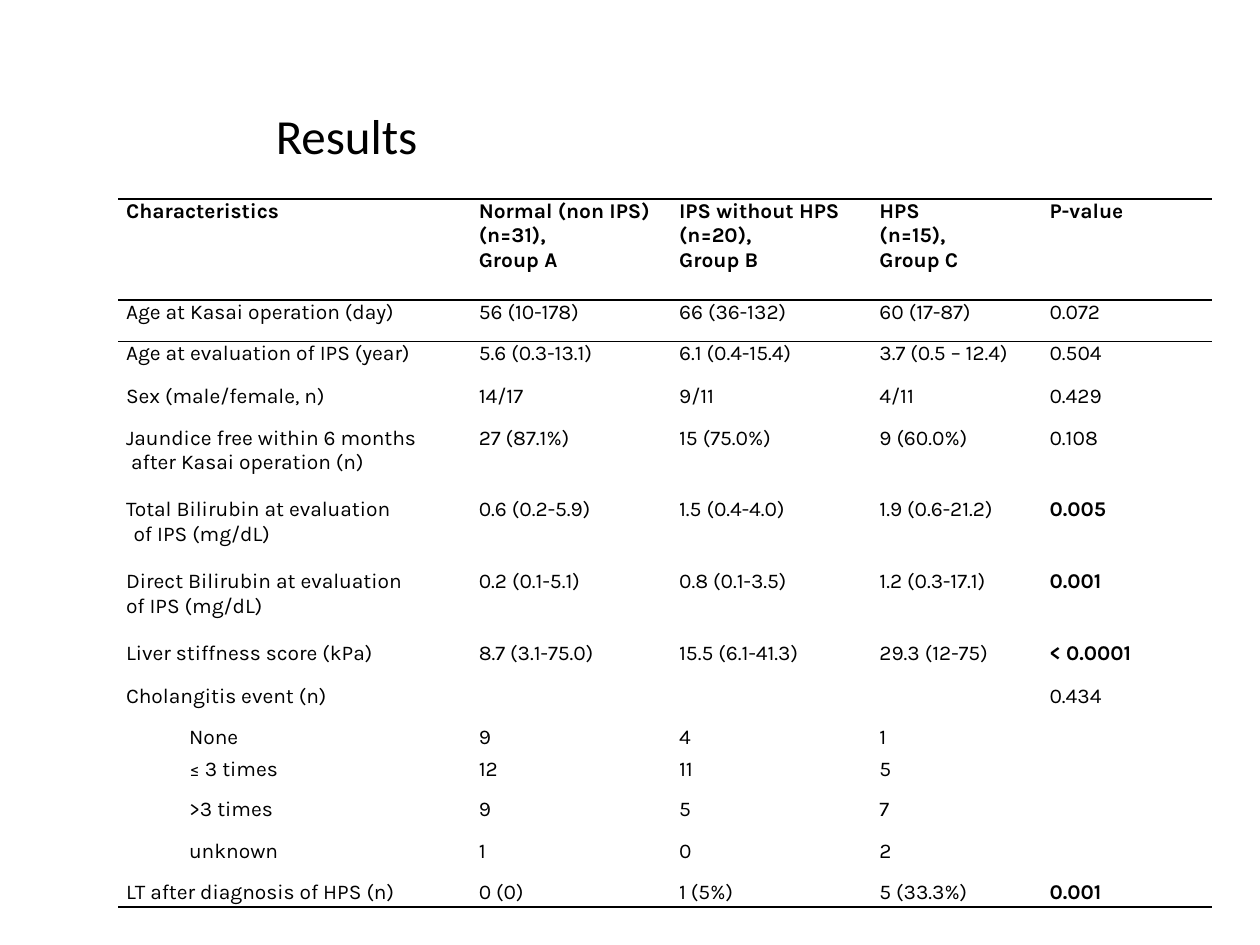
import pptx
import pptx.dml.color
import pptx.enum.text
import pptx.oxml
import pptx.oxml.ns
import pptx.util

BLACK = pptx.dml.color.RGBColor(0x00, 0x00, 0x00)
NO_STYLE = "{2D5ABB26-0587-4C30-8999-92F81FD0307C}"

# The slide is a grid of 100 columns by 75 rows, each 0.1 inch
GRID_COLUMNS, GRID_ROWS = 100, 75
COLUMN_SPANS = [5, 23, 15.9, 15.9, 13.5, 13.5]
SINGLE, DOUBLE = 3.3, 5.7
ROW_SPANS = [8, SINGLE, 3.4, SINGLE, DOUBLE, DOUBLE, DOUBLE, 3.4, SINGLE,
             2.5, 3.2, SINGLE, SINGLE, 2.1]

HEADER = ["Characteristics", "Normal (non IPS)\n(n=31),\nGroup A",
          "IPS without HPS\n(n=20),\nGroup B", "HPS\n(n=15),\nGroup C", "P-value"]
RESULTS = [
    ["Age at Kasai operation (day)", "56 (10-178)", "66 (36-132)", "60 (17-87)", "0.072"],
    ["Age at evaluation of IPS (year)", "5.6 (0.3-13.1)", "6.1 (0.4-15.4)",
     "3.7 (0.5 – 12.4)", "0.504"],
    ["Sex (male/female, n)", "14/17", "9/11", "4/11", "0.429"],
    ["Jaundice free within 6 months\nafter Kasai operation (n)",
     "27 (87.1%)", "15 (75.0%)", "9 (60.0%)", "0.108"],
    ["Total Bilirubin at evaluation\nof IPS (mg/dL)",
     "0.6 (0.2-5.9)", "1.5 (0.4-4.0)", "1.9 (0.6-21.2)", "0.005"],
    ["Direct Bilirubin at evaluation\nof IPS (mg/dL)",
     "0.2 (0.1-5.1)", "0.8 (0.1-3.5)", "1.2 (0.3-17.1)", "0.001"],
    ["Liver stiffness score (kPa)", "8.7 (3.1-75.0)", "15.5 (6.1-41.3)",
     "29.3 (12-75)", "< 0.0001"],
    ["Cholangitis event (n)", "", "", "", "0.434"],
    ["None", "9", "4", "1", ""],
    ["≤ 3 times", "12", "11", "5", ""],
    [">3 times", "9", "5", "7", ""],
    ["unknown", "1", "0", "2", ""],
    ["LT after diagnosis of HPS (n)", "0 (0)", "1 (5%)", "5 (33.3%)", "0.001"],
]
SUBROWS = {"None", "≤ 3 times", ">3 times", "unknown"}
SIGNIFICANT = {"0.005", "0.001", "< 0.0001"}
# Indent of the second line, in grid columns, by row number
SECOND_LINE_INDENT = {4: 0.4, 5: 0.6}


class ResultsSlide:
    title_format = {"name": "Calibri", "size": pptx.util.Pt(28)}
    cell_format = {"name": "Karla", "size": pptx.util.Pt(12)}
    cell_margins = {"margin_left": 0.6, "margin_right": 0.6,
                    "margin_top": 0, "margin_bottom": 0}

    def __init__(self, deck):
        self.slide = deck.slides.add_slide(deck.slide_layouts[6])
        self.column = deck.slide_width / GRID_COLUMNS
        self.row = deck.slide_height / GRID_ROWS

    def across(self, columns):
        return pptx.util.Emu(round(columns * self.column))

    def down(self, rows):
        return pptx.util.Emu(round(rows * self.row))

    def place(self, left, top, width, height):
        return self.across(left), self.down(top), self.across(width), self.down(height)

    def add_span(self, para, text, style, bold=False):
        span = para.add_run()
        span.text = text
        for name, value in {**style, "bold": bold}.items():
            setattr(span.font, name, value)
        span.font.color.rgb = BLACK

    def title(self, text, *area):
        frame = self.slide.shapes.add_textbox(*self.place(*area)).text_frame
        frame.word_wrap = True
        frame.vertical_anchor = pptx.enum.text.MSO_ANCHOR.BOTTOM
        self.add_span(frame.paragraphs[0], text, self.title_format)

    def rule(self, cell, edge):
        cell._tc.get_or_add_tcPr().append(pptx.oxml.parse_xml(
            f'<a:{edge} {pptx.oxml.ns.nsdecls("a")} w="12700"><a:solidFill>'
            f'<a:srgbClr val="{BLACK}"/></a:solidFill></a:{edge}>'))

    def fill_cell(self, cell, text, bold, second_indent):
        frame = cell.text_frame
        for index, line in enumerate(text.split("\n")):
            para = frame.add_paragraph() if index else frame.paragraphs[0]
            para.alignment = pptx.enum.text.PP_ALIGN.JUSTIFY
            if index and second_indent:
                para._p.get_or_add_pPr().set("marL", str(self.across(second_indent)))
            if line:
                self.add_span(para, line, self.cell_format, bold)

    def table(self, left, top, records):
        frame = self.slide.shapes.add_table(
            len(ROW_SPANS), len(COLUMN_SPANS),
            *self.place(left, top, sum(COLUMN_SPANS), sum(ROW_SPANS)))
        grid = frame.table
        grid.first_row = grid.horz_banding = False
        grid._tbl.tblPr.find(pptx.oxml.ns.qn("a:tableStyleId")).text = NO_STYLE
        for column, columns in zip(grid.columns, COLUMN_SPANS):
            column.width = self.across(columns)
        for row, rows in zip(grid.rows, ROW_SPANS):
            row.height = self.down(rows)

        # Rules above and below the header, and under the last row
        edges = {0: ["lnT", "lnB"], 1: ["lnT"], len(records) - 1: ["lnB"]}
        for number, (label, *values) in enumerate(records):
            # Main labels cover both left columns; sub-rows start in the second
            texts = ["", label, *values] if label in SUBROWS else [label, "", *values]
            if label not in SUBROWS:
                grid.cell(number, 0).merge(grid.cell(number, 1))
            for cell, text in zip(grid.rows[number].cells, texts):
                for name, columns in self.cell_margins.items():
                    setattr(cell, name, self.across(columns))
                for edge in edges.get(number, []):
                    self.rule(cell, edge)
                cell.fill.background()
                self.fill_cell(cell, text, number == 0 or text in SIGNIFICANT,
                               SECOND_LINE_INDENT.get(number))
                if not text:
                    # Empty cells keep the small text size so rows stay low
                    cell.text_frame.paragraphs[0]._p.append(pptx.oxml.parse_xml(
                        f'<a:endParaRPr {pptx.oxml.ns.nsdecls("a")} sz="1200"/>'))


def main():
    deck = pptx.Presentation()
    deck.slide_width = pptx.util.Inches(10)
    deck.slide_height = pptx.util.Inches(7.5)
    page = ResultsSlide(deck)
    page.title("Results", 20.9, 2.5, 74.8, 11)
    page.table(9.4, 15.8, [HEADER, *RESULTS])
    deck.save("out.pptx")


if __name__ == "__main__":
    main()
